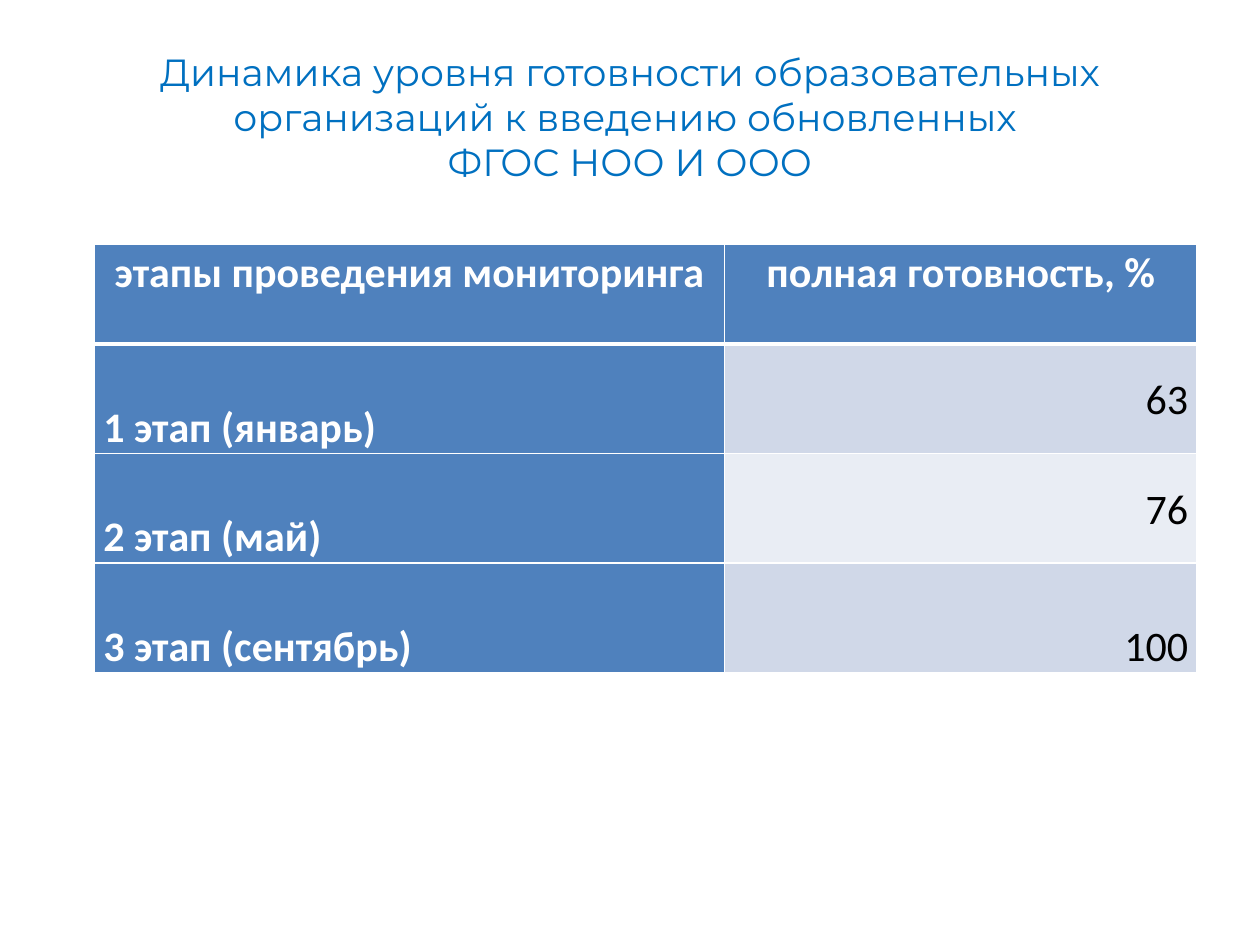
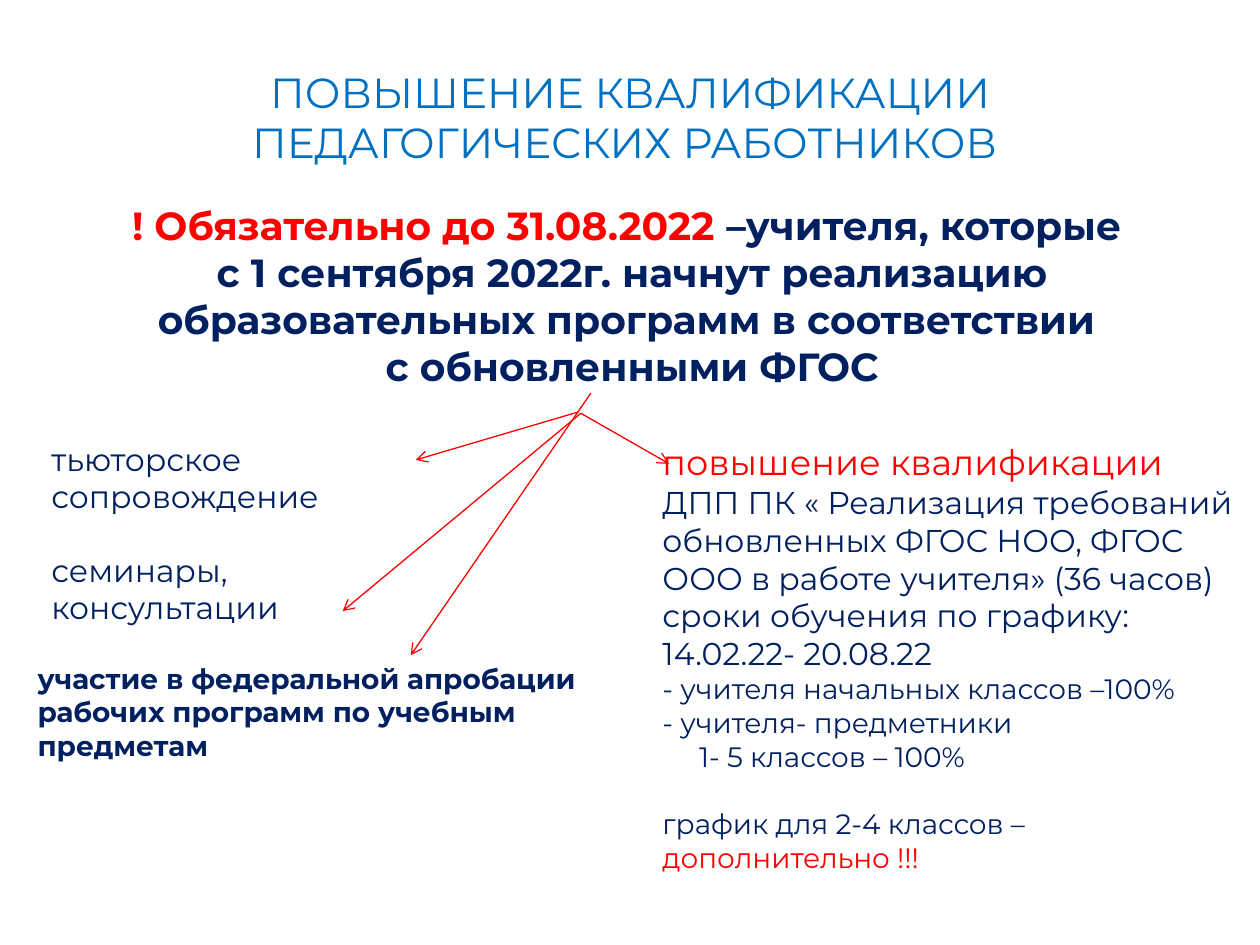
from lxml.etree import SubElement as Sub
from pptx import Presentation
from pptx.dml.color import RGBColor
from pptx.enum.shapes import MSO_CONNECTOR as Link
from pptx.enum.text import MSO_ANCHOR as Anchor, MSO_AUTO_SIZE as Fit, PP_ALIGN as Align
from pptx.oxml.ns import qn
from pptx.util import Inches, Pt

BLUE, NAVY, RED = "0070C0", "002060", "FF0000"
WHITE, BLACK = "FFFFFF", "000000"
HEAD, BANDS = "4F81BD", ("D0D8E8", "E9EDF4")
FONT, PLAIN = "Montserrat", "Calibri"
COLS, ROWS = 100, 75


def paint(target, color):
    target.rgb = RGBColor.from_string(color)


class Deck:
    def __init__(self):
        self.prs = Presentation()
        self.prs.slide_width, self.prs.slide_height = Inches(10), Inches(7.5)
        self.slide = None

    def x(self, cols):
        return round(self.prs.slide_width * cols / COLS)

    def y(self, rows):
        return round(self.prs.slide_height * rows / ROWS)

    def box(self, left, top, width, height):
        return self.x(left), self.y(top), self.x(width), self.y(height)

    def start(self, layout, title, size):
        self.slide = self.prs.slides.add_slide(self.prs.slide_layouts[layout])
        self.hold(0, (5, 3, 90, 12.5), [(title, size, BLUE)], align=Align.CENTER)

    def style(self, para, size, color, bold=False, face=FONT, align=Align.LEFT):
        font = para.font
        font.name, font.size, font.bold = face, Pt(size), bold
        paint(font.color, color)
        para.alignment = align

    def put(self, frame, paras, **look):
        frame.word_wrap = True
        frame.auto_size = Fit.NONE
        for i, (text, size, color, *more) in enumerate(paras):
            para = frame.add_paragraph() if i else frame.paragraphs[0]
            if isinstance(text, str):
                para.text = text
            else:
                for words, tint in text:
                    run = para.add_run()
                    run.text = words
                    paint(run.font.color, tint)
            self.style(para, size, color, **look)
            indent, gap = more or (0, 0)
            para.space_before = Pt(gap)
            props = para._p.get_or_add_pPr()
            props.set("marL", str(self.x(indent)))
            props.set("indent", "0")
            bullet = props.makeelement(qn("a:buNone"))
            props.find(qn("a:defRPr")).addprevious(bullet)

    def hold(self, idx, area, paras, **look):
        shape = self.slide.placeholders[idx]
        shape.left, shape.top, shape.width, shape.height = self.box(*area)
        self.put(shape.text_frame, paras, **look)

    def text(self, area, paras, **look):
        shape = self.slide.shapes.add_textbox(*self.box(*area))
        self.put(shape.text_frame, paras, **look)

    def arrow(self, start, end):
        line = self.slide.shapes.add_connector(
            Link.STRAIGHT, self.x(start[0]), self.y(start[1]), self.x(end[0]), self.y(end[1]))
        paint(line.line.color, RED)
        line.line.width = Pt(0.75)
        props = line._element.spPr
        Sub(props.get_or_add_ln(), qn("a:tailEnd"), type="arrow")
        Sub(props, qn("a:effectLst"))

    def edge(self, cell, side, width):
        props = cell._tc.get_or_add_tcPr()
        line = Sub(props, qn(f"a:ln{side}"), w=str(Pt(width)))
        Sub(Sub(line, qn("a:solidFill")), qn("a:srgbClr"), val=WHITE)

    def cell(self, cell, text, row, col):
        head, tag = row == 0, row == 0 or col == 0
        for side in "LRTB":
            thick = (head and side == "B") or (row == 1 and side == "T")
            self.edge(cell, side, 3 if thick else 1)
        cell.fill.solid()
        paint(cell.fill.fore_color, HEAD if tag else BANDS[(row - 1) % 2])
        cell.margin_left = cell.margin_right = self.x(0.7)
        cell.margin_top = cell.margin_bottom = 0
        cell.text = text
        para = cell.text_frame.paragraphs[0]
        align = Align.CENTER if head else Align.RIGHT if col else Align.LEFT
        self.style(para, 24, WHITE if tag else BLACK, tag, PLAIN, align)
        para.line_spacing = 1.07

    def table(self, area, widths, heights, data):
        grid = self.slide.shapes.add_table(len(data), len(widths), *self.box(*area)).table
        for col, width in zip(grid.columns, widths):
            col.width = self.x(width)
        for row, height in zip(grid.rows, heights):
            row.height = self.y(height)
        for r, texts in enumerate(data):
            for c, text in enumerate(texts):
                self.cell(grid.cell(r, c), text, r, c)
        return grid


def stages(deck):
    deck.start(5, "Динамика уровня готовности образовательных организаций "
                  "к введению обновленных \vФГОС НОО И ООО", 21.6)
    data = [("этапы проведения мониторинга", "полная готовность, %"),
            ("1 этап (январь)", "63"), ("2 этап (май)", "76"), ("3 этап (сентябрь)", "100")]
    grid = deck.table((7.5, 19.4, 87.5, 34), (50, 37.5), (7.9, 8.7, 8.7, 8.7), data)
    for row in range(1, 4):
        grid.cell(row, 0).vertical_anchor = Anchor.BOTTOM
        grid.cell(row, 1).vertical_anchor = Anchor.BOTTOM if row == 3 else Anchor.MIDDLE


def training(deck):
    deck.start(1, "ПОВЫШЕНИЕ КВАЛИФИКАЦИИ ПЕДАГОГИЧЕСКИХ РАБОТНИКОВ ", 24)
    deck.hold(1, (3.1, 15.5, 94.2, 17.3), [
        ([("! Обязательно до 31.08.2022 ", RED), ("–учителя, которые ", NAVY)], 22.4, NAVY),
        ("с 1 сентября 2022г. начнут реализацию образовательных программ в соответствии ",
         22.4, NAVY),
        ("с обновленными ФГОС", 22.4, NAVY)], bold=True, align=Align.CENTER)
    deck.text((3.1, 34.4, 28.8, 8.4), [("тьюторское сопровождение", 18, NAVY)])
    deck.text((3.1, 43.2, 25.2, 6.9), [("семинары, консультации", 18, NAVY)])
    deck.text((2, 52, 45.7, 9.9), [
        ("участие в федеральной апробации рабочих программ по учебным предметам", 16, NAVY)],
        bold=True)
    hub = (46.1, 32.8)
    for start, end in ((hub, (53.1, 36.8)), ((45.9, 32.7), (33, 36.5)),
                       (hub, (27.2, 48.5)), ((46.9, 31.2), (32.6, 52))):
        deck.arrow(start, end)
    deck.text((51.6, 34.5, 48.4, 27.5), [
        ("повышение квалификации", 20, RED),
        ("ДПП ПК « Реализация требований обновленных ФГОС НОО, ФГОС ООО "
         "в работе учителя» (36 часов)", 18, NAVY),
        ("сроки обучения по графику: 14.02.22- 20.08.22", 18, NAVY),
        ("- учителя начальных классов –100%", 16, NAVY),
        ("- учителя- предметники", 16, NAVY),
        ("1- 5 классов – 100%", 16, NAVY, 2.9, 0),
        ([("график для 2-4 классов – ", NAVY), ("дополнительно !!!", RED)], 16, NAVY, 0, 19.5)])


def main():
    deck = Deck()
    stages(deck)
    training(deck)
    deck.prs.save("out.pptx")


if __name__ == "__main__":
    main()
